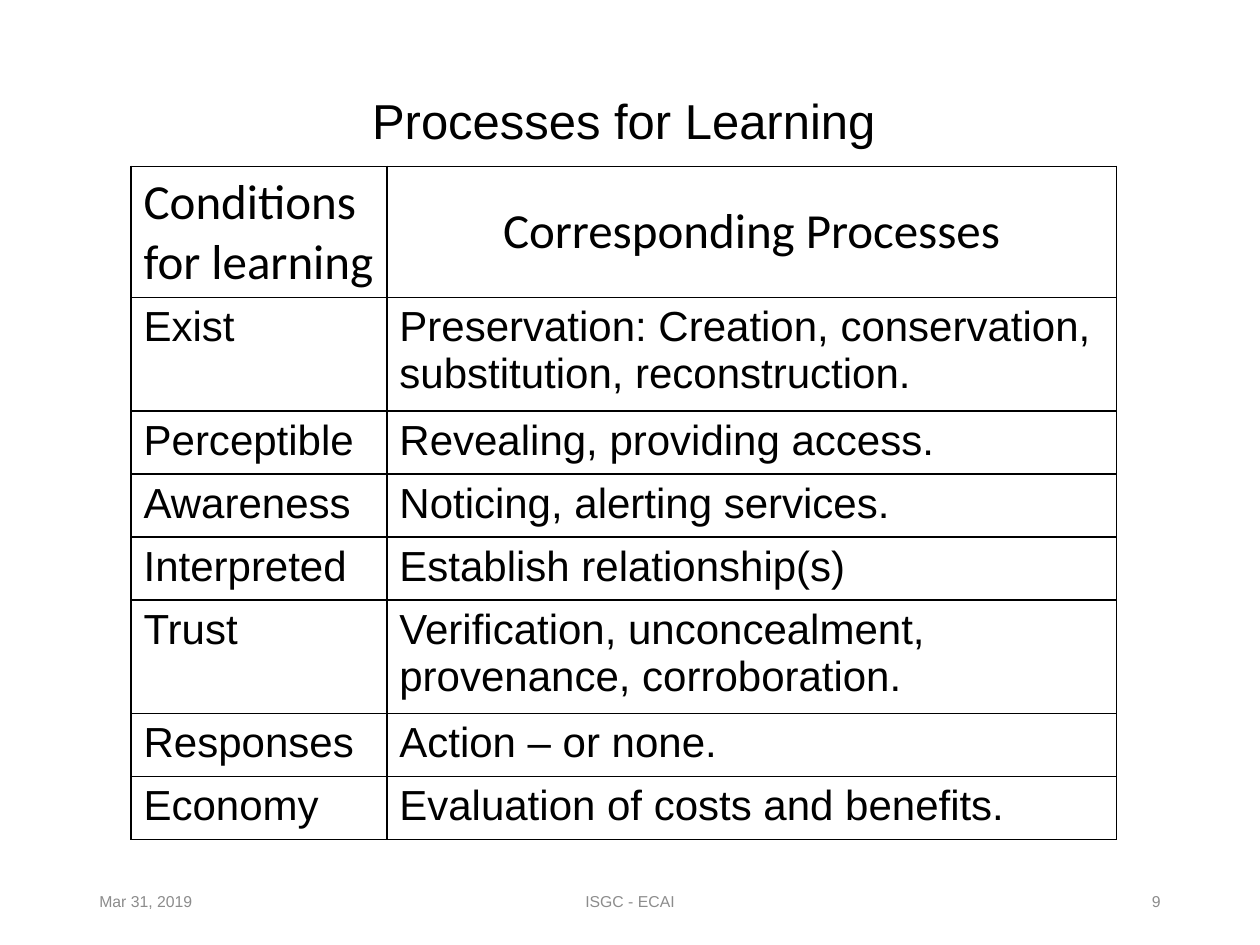
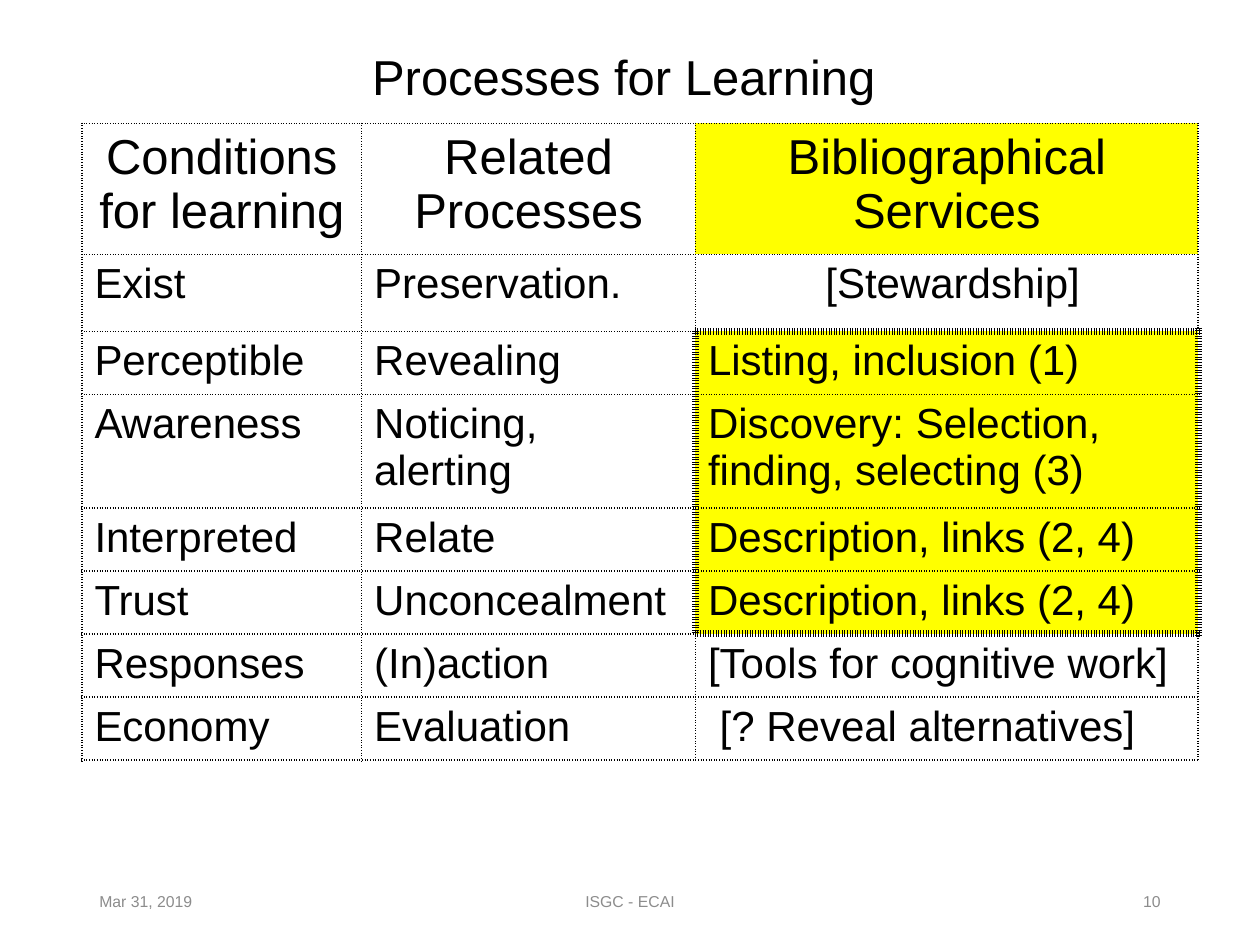
import pptx
import pptx.util
import pptx.dml.color
import pptx.enum.text
from lxml import etree
from pptx.oxml.ns import qn

Inches = pptx.util.Inches
ALIGN = {"l": pptx.enum.text.PP_ALIGN.LEFT,
         "c": pptx.enum.text.PP_ALIGN.CENTER,
         "r": pptx.enum.text.PP_ALIGN.RIGHT}
ANCHOR = pptx.enum.text.MSO_ANCHOR
BLACK, GREY, WHITE, YELLOW = "000000", "8C8C8C", "FFFFFF", "FFFF00"

# Edge tag -> row and column step to the neighbouring cell
EDGES = {"lnL": (0, -1), "lnR": (0, 1), "lnT": (-1, 0), "lnB": (1, 0)}


def rgb(hex_string):
    return pptx.dml.color.RGBColor.from_string(hex_string)


class Deck:
    """Holds the shared style and the current slide."""

    title_format = {"size": 28, "align": "c",
                    "space_before": pptx.util.Pt(6),
                    "space_after": pptx.util.Pt(12)}
    header_size, body_size = 28, 24
    thin, thick = 1, 4.5

    def __init__(self):
        self.prs = pptx.Presentation()
        self.prs.slide_width, self.prs.slide_height = Inches(10), Inches(7.5)
        self.s = None

    def put_text(self, tf, text, size, align="l", font="Arial", color=BLACK,
                 **spacing):
        p = tf.paragraphs[0]
        p.alignment = ALIGN[align]
        for name, value in spacing.items():
            setattr(p, name, value)
        r = p.add_run()
        r.text = text
        for name, value in {"size": pptx.util.Pt(size), "name": font,
                            "bold": False}.items():
            setattr(r.font, name, value)
        r.font.color.rgb = rgb(color)

    def slide(self, title, title_top, number):
        self.s = self.prs.slides.add_slide(self.prs.slide_layouts[5])
        self.title(title, title_top)
        self.footer("Mar 31, 2019", 0.69, 2.25, "l")
        self.footer("ISGC - ECAI", 3.31, 3.38, "c")
        self.footer(str(number), 7.06, 2.25, "r")

    def title(self, text, top):
        sp = self.s.shapes.title
        for name, value in {"left": 0.8, "top": top, "width": 8.3,
                            "height": 0.57}.items():
            setattr(sp, name, Inches(value))
        tf = sp.text_frame
        tf.auto_size = pptx.enum.text.MSO_AUTO_SIZE.SHAPE_TO_FIT_TEXT
        tf.vertical_anchor = ANCHOR.TOP
        self.put_text(tf, text, **self.title_format)

    def footer(self, text, left, width, align):
        sp = self.s.shapes.add_textbox(Inches(left), Inches(6.95),
                                       Inches(width), Inches(0.4))
        tf = sp.text_frame
        tf.word_wrap = True
        tf.vertical_anchor = ANCHOR.MIDDLE
        self.put_text(tf, text, 9, align, color=GREY)

    def border(self, cell, edge, width, dash):
        ln = etree.SubElement(cell._tc.get_or_add_tcPr(), qn("a:" + edge),
                              w=str(pptx.util.Pt(width)))
        fill = etree.SubElement(ln, qn("a:solidFill"))
        etree.SubElement(fill, qn("a:srgbClr"), val=BLACK)
        etree.SubElement(ln, qn("a:prstDash"), val=dash)

    def table(self, left, top, widths, heights, rows, dash="solid",
              boxed=(), yellow=(), formats=None):
        """Draw a table; cells in boxed are yellow inside a thick outline."""
        formats = formats or {}
        frame = self.s.shapes.add_table(
            len(rows), len(widths), Inches(left), Inches(top),
            Inches(sum(widths)), Inches(sum(heights)))
        tbl = frame.table
        tbl.first_row = tbl.horz_banding = False
        for column, width in zip(tbl.columns, widths):
            column.width = Inches(width)
        for row, height in zip(tbl.rows, heights):
            row.height = Inches(height)
        for i, row in enumerate(rows):
            for j, text in enumerate(row):
                cell = tbl.cell(i, j)
                here = (i, j) in boxed
                for edge, (di, dj) in EDGES.items():
                    outline = here != ((i + di, j + dj) in boxed)
                    self.border(cell, edge,
                                self.thick if outline else self.thin, dash)
                cell.fill.solid()
                cell.fill.fore_color.rgb = rgb(
                    YELLOW if here or (i, j) in yellow else WHITE)
                style = dict(formats.get((i, j), {}))
                cell.vertical_anchor = style.pop("anchor", ANCHOR.TOP)
                size = self.body_size if i else self.header_size
                self.put_text(cell.text_frame, text, size, **style)


def main():
    deck = Deck()
    title = "Processes for Learning"
    conditions = ["Conditions for learning", "Exist", "Perceptible",
                  "Awareness", "Interpreted", "Trust", "Responses", "Economy"]
    header, one_line, two_lines = 1.04, 0.5, 0.9

    # Conditions and their processes
    deck.slide(title, 0.67, 9)
    processes = ["Corresponding Processes",
                 "Preservation: Creation, conservation, substitution, "
                 "reconstruction.",
                 "Revealing, providing access.",
                 "Noticing, alerting services.",
                 "Establish relationship(s)",
                 "Verification, unconcealment, provenance, corroboration.",
                 "Action – or none.",
                 "Evaluation of costs and benefits."]
    deck.table(1.04, 1.32, [2.03, 5.79],
               [header, two_lines] + [one_line] * 3 + [two_lines]
               + [one_line] * 2,
               list(zip(conditions, processes)),
               formats={(0, 0): {"font": "Calibri"},
                        (0, 1): {"font": "Calibri", "align": "c",
                                 "anchor": ANCHOR.MIDDLE}})

    # Bibliographical services added
    deck.slide(title, 0.32, 10)
    related = ["Related Processes", "Preservation.", "Revealing",
               "Noticing, alerting", "Relate", "Unconcealment", "(In)action",
               "Evaluation"]
    services = ["Bibliographical Services", " [Stewardship]",
                "Listing, inclusion (1)",
                "Discovery: Selection, finding, selecting (3)",
                "Description, links (2, 4)", "Description, links (2, 4)",
                "[Tools for cognitive work]", " [? Reveal alternatives]"]
    centred = [(0, 0), (0, 1), (0, 2), (1, 2)]
    deck.table(0.65, 0.98, [2.22, 2.65, 3.99],
               [header, 0.61, one_line, two_lines] + [one_line] * 4,
               list(zip(conditions, related, services)), dash="sysDot",
               boxed={(i, 2) for i in range(2, 6)}, yellow={(0, 2)},
               formats={key: {"align": "c"} for key in centred})

    deck.prs.save("out.pptx")


if __name__ == "__main__":
    main()
